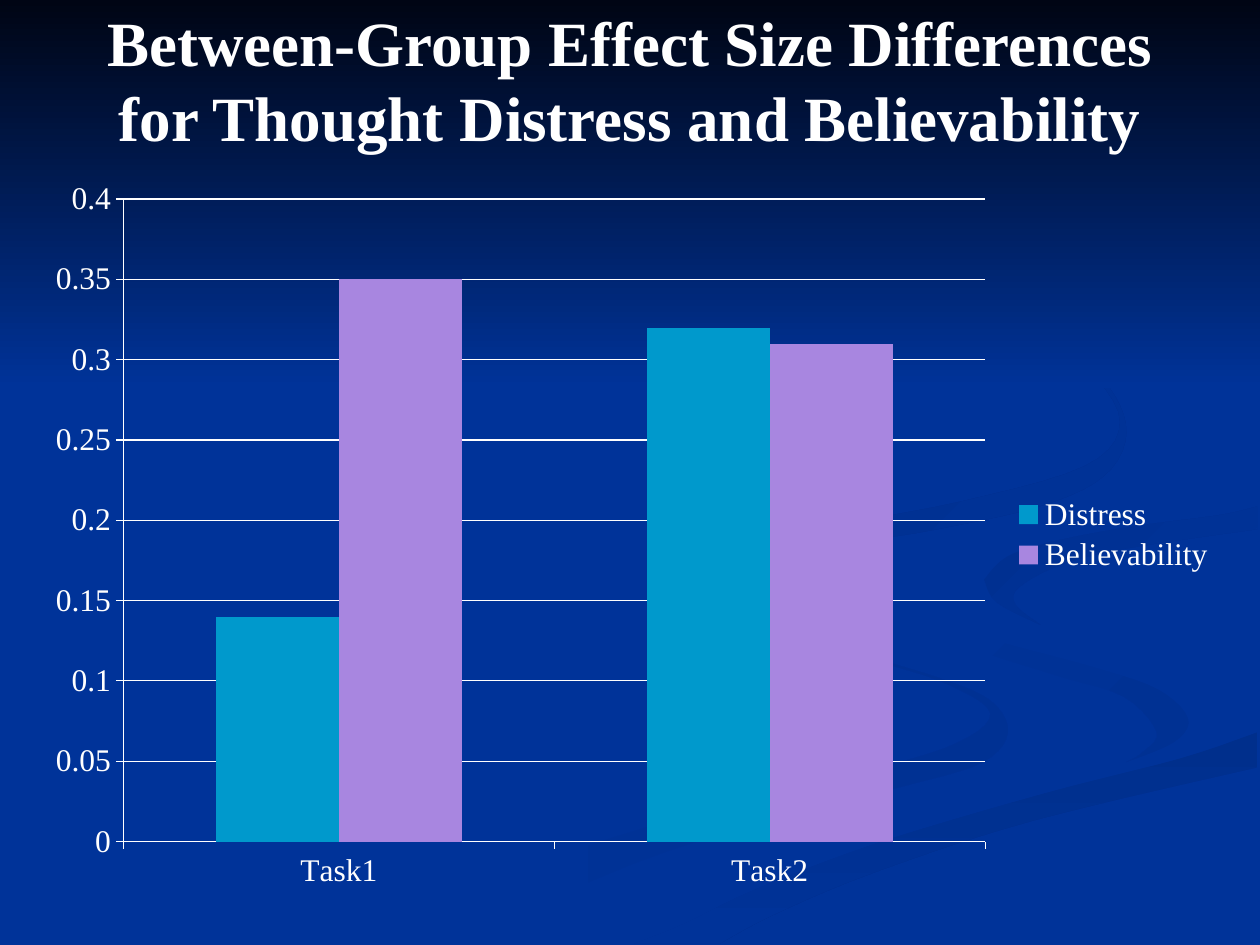
from lxml.etree import SubElement
from pptx import Presentation
from pptx.chart.data import CategoryChartData
from pptx.dml.color import RGBColor
from pptx.enum.chart import XL_CHART_TYPE, XL_LEGEND_POSITION, XL_TICK_MARK
from pptx.enum.text import MSO_ANCHOR, MSO_AUTO_SIZE, PP_ALIGN
from pptx.oxml.ns import qn
from pptx.util import Inches, Pt

COLORS = {
    "background": "003399",
    "night": "000514",
    "soft shade": "003193",
    "hook shade": "003091",
    "swirl shade": "002F8E",
    "sweep shade": "002F8C",
    "text": "FFFFFF",
    "distress": "0099CC",
    "believability": "A886E0",
}

UNITS_PER_INCH = 1000
STEPS_PER_CURVE = 5

EDGES = {
    "lower swirl outer": [
        (5.75, 4.59), (5.74, 4.64), (5.87, 4.81), (6.26, 5.02), (6.82, 5.19),
        (7.45, 5.38), (7.86, 5.56), (8, 5.81), (7.8, 6.05), (7.21, 6.23),
        (6.23, 6.47), (4.99, 6.87), (3.61, 7.49),
    ],
    "lower swirl inner": [
        (5.75, 4.59), (5.72, 4.76), (6.11, 4.99), (6.97, 5.25), (7.52, 5.43),
        (7.86, 5.66), (7.59, 5.9), (6.84, 6.13), (5.39, 6.49), (4.17, 6.9), (3, 7.49),
    ],
    "crescent outer": [
        (7.24, 4.64), (7.33, 4.83), (7.58, 4.98), (7.92, 5.09), (8.7, 5.3),
        (9.19, 5.47), (9.43, 5.7), (9.32, 5.89), (8.94, 6.05),
    ],
    "crescent inner": [
        (7.24, 4.64), (7.33, 4.88), (7.66, 5.12), (8.38, 5.36), (8.92, 5.53),
        (9.18, 5.81), (9.07, 5.97), (8.94, 6.05),
    ],
    "sweep top": [
        (5.03, 7.49), (5.43, 7.33), (5.99, 7.06), (6.96, 6.69), (8.31, 6.29),
        (9.36, 6.02), (9.98, 5.81),
    ],
    "sweep bottom": [(5.71, 7.49), (6.14, 7.26), (6.95, 6.92), (8.21, 6.51), (9.98, 6.09)],
    "ribbon top": [
        (9.99, 3.87), (9.42, 3.99), (8.74, 4.08), (7.88, 4.22), (7.42, 4.39), (7.24, 4.64),
    ],
    "ribbon tail": [
        (8.94, 6.05), (8.43, 6.18), (7.43, 6.43), (6.63, 6.68), (5.73, 7.03), (4.77, 7.49),
    ],
    "ribbon fold": [
        (9.99, 5.38), (9.41, 5.27), (8.66, 5.09), (8.17, 4.92), (7.86, 4.73), (7.81, 4.6),
    ],
    "hook top": [
        (7.81, 4.6), (7.99, 4.42), (8.35, 4.3), (8.98, 4.18), (9.67, 4.09), (9.98, 4.02),
    ],
    "hook tip": [(7.81, 4.6), (7.91, 4.78), (8.26, 4.96)],
    "hook inner": [
        (8.26, 4.96), (8.06, 4.8), (8.09, 4.66), (8.43, 4.48), (8.96, 4.35), (9.98, 4.2),
    ],
    "upper swirl outer": [
        (7.62, 2.33), (7.99, 2.5), (8.43, 2.75), (8.8, 3.07), (8.94, 3.44),
        (8.76, 3.78), (8.25, 4.02), (7.39, 4.21), (6.83, 4.3), (6.24, 4.44),
        (5.93, 4.7), (6.22, 5),
    ],
    "upper swirl inner": [
        (7.62, 2.33), (8.05, 2.54), (8.62, 2.92), (8.89, 3.35), (8.61, 3.7),
        (7.63, 3.98), (6.49, 4.2), (5.89, 4.41), (5.77, 4.62), (5.9, 4.84), (6.22, 5),
    ],
    "band top": [(0, 0), (10, 0)],
    "band bottom": [(0, 3.08), (10, 3.08)],
}

FORWARD, BACKWARD = 1, -1
RIBBONS = [
    ([("lower swirl outer", FORWARD), ("lower swirl inner", BACKWARD)],
     "background", "soft shade", 0),
    ([("crescent outer", FORWARD), ("crescent inner", BACKWARD)],
     "background", "soft shade", 45),
    ([("sweep top", FORWARD), ("sweep bottom", BACKWARD)],
     "sweep shade", "background", 90),
    ([("ribbon top", FORWARD), ("crescent outer", FORWARD), ("ribbon tail", FORWARD),
      ("sweep top", FORWARD), ("ribbon fold", FORWARD), ("hook top", FORWARD)],
     "background", "background", 0),
    ([("hook tip", FORWARD), ("hook inner", FORWARD), ("hook top", BACKWARD)],
     "hook shade", "background", 45),
    ([("upper swirl outer", FORWARD), ("upper swirl inner", BACKWARD)],
     "swirl shade", "background", 45),
    ([("band top", FORWARD), ("band bottom", BACKWARD)], "night", "background", 90),
]

CHART_BOX = (0.25, 1.33, 9.5, 5.83)
PLOT_BOX = (0.98, 1.58, 6.84, 5.1)
SERIES = {"Distress": (0.14, 0.32), "Believability": (0.35, 0.31)}


def color_of(name):
    return RGBColor.from_string(COLORS[name])


def spline(before, start, end, after, t):
    return 0.5 * (
        2 * start
        + (end - before) * t
        + (2 * before - 5 * start + 4 * end - after) * t ** 2
        + (3 * start - before - 3 * end + after) * t ** 3
    )


def smooth(knots):
    padded = [knots[0], *knots, knots[-1]]
    points = []
    for neighbours in zip(padded, padded[1:], padded[2:], padded[3:]):
        for step in range(STEPS_PER_CURVE):
            t = step / STEPS_PER_CURVE
            points.append(tuple(spline(*values, t) for values in zip(*neighbours)))
    return points + [knots[-1]]


class SlideBuilder:
    font_name = "Times New Roman"

    def __init__(self, slide):
        self.slide = slide
        self.fill_solid(slide.background.fill, "background")

    def fill_solid(self, fill, color):
        fill.solid()
        fill.fore_color.rgb = color_of(color)

    def style_font(self, font, size, bold=False):
        font.name, font.size, font.bold = self.font_name, Pt(size), bold
        font.color.rgb = color_of("text")

    def style_line(self, line):
        line.color.rgb = color_of("text")
        line.width = Pt(0.75)

    def add_ribbon(self, edges, start, end, angle):
        points = [
            (x * UNITS_PER_INCH, y * UNITS_PER_INCH)
            for name, direction in edges
            for x, y in smooth(EDGES[name])[::direction]
        ]
        builder = self.slide.shapes.build_freeform(*points[0], scale=Inches(1) / UNITS_PER_INCH)
        builder.add_line_segments(points[1:], close=True)
        shape = builder.convert_to_shape()
        shape.shadow.inherit = False
        shape.line.fill.background()
        if start == end:
            self.fill_solid(shape.fill, start)
            return
        shape.fill.gradient()
        shape.fill.gradient_angle = -angle % 360
        for stop, color in zip(shape.fill.gradient_stops, (start, end)):
            stop.color.rgb = color_of(color)

    def add_title(self, text, *box):
        title = self.slide.shapes.title
        title.left, title.top, title.width, title.height = map(Inches, box)
        self.slide.shapes._spTree.append(title._element)
        frame = title.text_frame
        frame.word_wrap = True
        frame.auto_size = MSO_AUTO_SIZE.NONE
        frame.vertical_anchor = MSO_ANCHOR.MIDDLE
        paragraph = frame.paragraphs[0]
        paragraph.alignment = PP_ALIGN.CENTER
        run = paragraph.add_run()
        run.text = text
        self.style_font(run.font, 36, bold=True)

    def add_column_chart(self, categories, series):
        data = CategoryChartData()
        data.categories = categories
        for name, values in series.items():
            data.add_series(name, values)
        chart = self.slide.shapes.add_chart(
            XL_CHART_TYPE.COLUMN_CLUSTERED, *map(Inches, CHART_BOX), data
        ).chart
        self.style_font(chart.font, 18)
        chart.has_title = False
        chart.has_legend = True
        chart.legend.position = XL_LEGEND_POSITION.RIGHT
        chart.legend.include_in_layout = False
        plot = chart.plots[0]
        plot.gap_width, plot.overlap, plot.vary_by_categories = 150, 0, False
        for column in plot.series:
            self.fill_solid(column.format.fill, column.name.lower())
        self.style_axes(chart.category_axis, chart.value_axis)
        self.place_plot(chart)

    def style_axes(self, category_axis, value_axis):
        value_axis.minimum_scale, value_axis.maximum_scale = 0, 0.4
        value_axis.major_unit = 0.05
        value_axis.has_major_gridlines = True
        for axis in (category_axis, value_axis):
            axis.major_tick_mark = XL_TICK_MARK.OUTSIDE
        for part in (category_axis, value_axis, value_axis.major_gridlines):
            self.style_line(part.format.line)

    def place_plot(self, chart):
        left, top, width, height = CHART_BOX
        plot_left, plot_top, plot_width, plot_height = PLOT_BOX
        settings = {
            "layoutTarget": "inner", "xMode": "edge", "yMode": "edge",
            "x": (plot_left - left) / width, "y": (plot_top - top) / height,
            "w": plot_width / width, "h": plot_height / height,
        }
        area = chart._chartSpace.chart.plotArea
        for layout in area.findall(qn("c:layout")):
            area.remove(layout)
        layout = SubElement(area, qn("c:layout"))
        area.insert(0, layout)
        manual = SubElement(layout, qn("c:manualLayout"))
        for tag, value in settings.items():
            SubElement(manual, qn(f"c:{tag}")).set("val", str(value))


def main():
    presentation = Presentation()
    presentation.slide_width, presentation.slide_height = Inches(10), Inches(7.5)
    builder = SlideBuilder(presentation.slides.add_slide(presentation.slide_layouts[5]))
    for ribbon in RIBBONS:
        builder.add_ribbon(*ribbon)
    title = "Between-Group Effect Size Differences for Thought Distress and Believability"
    builder.add_title(title, 0.5, 0, 9, 1.25)
    builder.add_column_chart(("Task1", "Task2"), SERIES)
    presentation.save("out.pptx")


if __name__ == "__main__":
    main()
